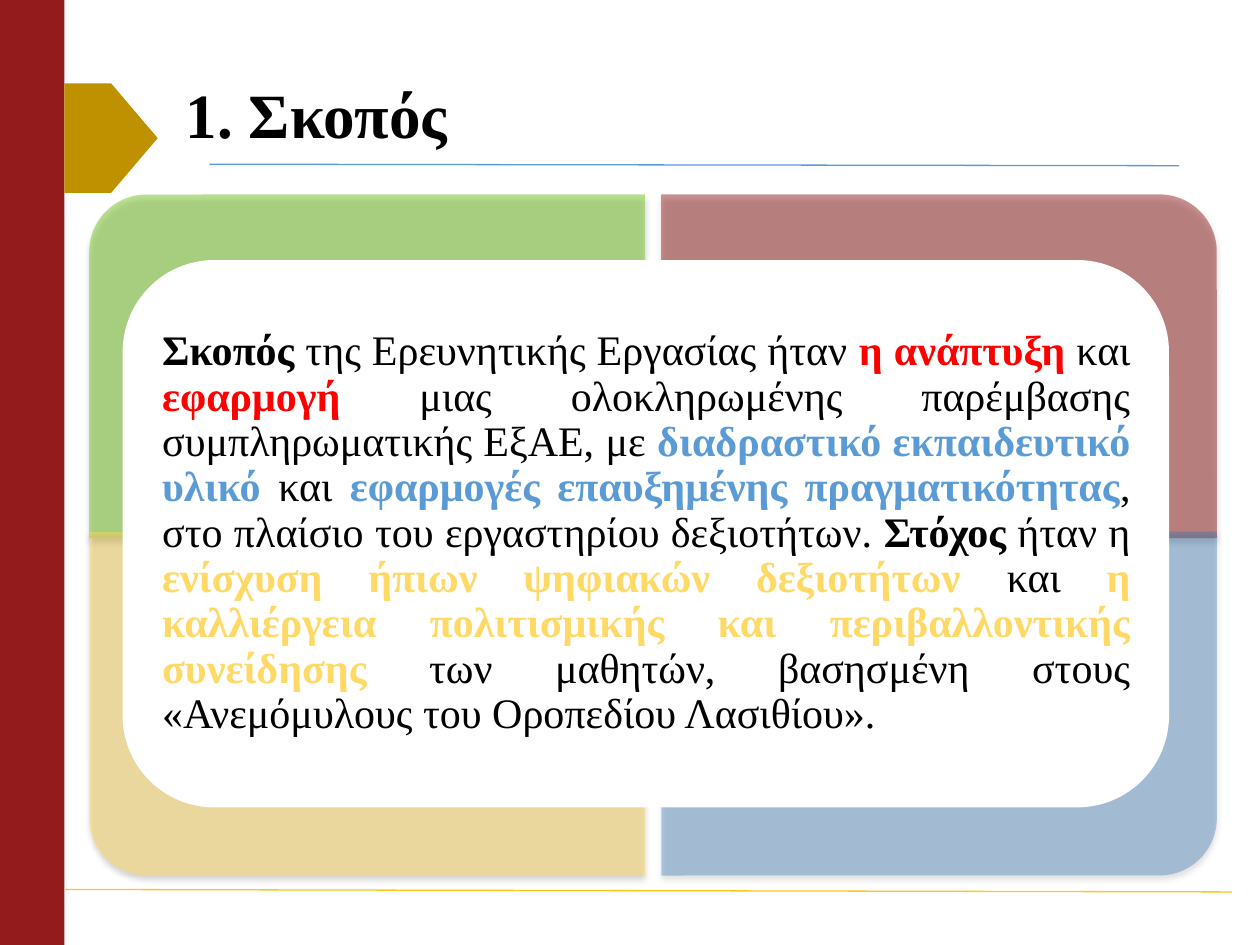
from lxml import etree
from pptx import Presentation
from pptx.dml.color import RGBColor
from pptx.enum.shapes import MSO_CONNECTOR as Connector, MSO_SHAPE as Shape
from pptx.enum.text import MSO_ANCHOR as Anchor, PP_ALIGN as Align
from pptx.oxml.ns import qn
from pptx.util import Cm, Pt

BLACK = RGBColor(0x00, 0x00, 0x00)
WHITE = RGBColor(0xFF, 0xFF, 0xFF)
CRIMSON = RGBColor(0x93, 0x1B, 0x1B)
OCHRE = RGBColor(0xBF, 0x90, 0x00)
GOLD = RGBColor(0xFF, 0xC6, 0x1A)
SAND = RGBColor(0xFF, 0xD9, 0x66)
SKY = RGBColor(0x5B, 0x9B, 0xD5)
NAVY = RGBColor(0x2E, 0x75, 0xB6)
GREEN = RGBColor(0x92, 0xD0, 0x50)
RED = RGBColor(0xFF, 0x00, 0x00)

PURPOSE = [
    ("Σκοπός", BLACK, True),
    (" της Ερευνητικής Εργασίας ήταν ", BLACK, False),
    ("η ανάπτυξη ", RED, True),
    ("και ", BLACK, False),
    ("εφαρμογή", RED, True),
    (" μιας ολοκληρωμένης παρέμβασης συμπληρωματικής ΕξΑΕ, με ", BLACK, False),
    ("διαδραστικό εκπαιδευτικό υλικό ", SKY, True),
    ("και", BLACK, False),
    (" εφαρμογές επαυξημένης πραγματικότητας", SKY, True),
    (", στο πλαίσιο του εργαστηρίου δεξιοτήτων. ", BLACK, False),
    ("Στόχος", BLACK, True),
    (" ήταν η ", BLACK, False),
    ("ενίσχυση ήπιων ψηφιακών δεξιοτήτων ", SAND, True),
    ("και ", BLACK, False),
    ("η καλλιέργεια πολιτισμικής και περιβαλλοντικής συνείδησης", SAND, True),
    (" των μαθητών, βασησμένη στους «Ανεμόμυλους του Οροπεδίου Λασιθίου».",
     BLACK, False),
]


class SlideBuilder:
    font = "Times New Roman"

    def __init__(self, slide):
        self.slide = slide

    def block(self, kind, left, top, width, height, fill):
        shape = self.slide.shapes.add_shape(
            kind, Cm(left), Cm(top), Cm(width), Cm(height))
        shape.shadow.inherit = False
        shape.fill.solid()
        shape.fill.fore_color.rgb = fill
        shape.line.fill.background()
        return shape

    def quadrant(self, left, top, width, height, fill, opacity, turn):
        """Draw a translucent panel whose round corner is turned by quarter turns."""
        box = (left, top, width, height)
        if turn % 180:
            shift = (width - height) / 2
            box = (left + shift, top - shift, height, width)
        panel = self.block(Shape.ROUND_1_RECTANGLE, *box, fill)
        panel.rotation = turn
        properties = panel.element.spPr
        tint = properties.find(qn("a:solidFill"))[0]
        self.add_alpha(tint, opacity)
        shadow = etree.SubElement(
            properties.find(qn("a:effectLst")), qn("a:outerShdw"),
            blurRad=str(Pt(3.5)), dist=str(Pt(2.2)), dir="5400000",
            rotWithShape="0")
        shade = etree.SubElement(shadow, qn("a:srgbClr"), val=str(BLACK))
        self.add_alpha(shade, 32)

    @staticmethod
    def add_alpha(color, percent):
        etree.SubElement(color, qn("a:alpha"), val=str(percent * 1000))

    def rule(self, x1, y1, x2, y2, color):
        line = self.slide.shapes.add_connector(
            Connector.STRAIGHT, Cm(x1), Cm(y1), Cm(x2), Cm(y2))
        line.line.color.rgb = color
        line.line.width = Pt(0.75)
        etree.SubElement(line.element.spPr, qn("a:effectLst"))

    def text(self, left, top, width, height, runs, size, align, inset):
        frame = self.slide.shapes.add_textbox(
            Cm(left), Cm(top), Cm(width), Cm(height)).text_frame
        frame.word_wrap = True
        frame.vertical_anchor = Anchor.MIDDLE
        frame.margin_left = frame.margin_right = Cm(0.25)
        frame.margin_top = frame.margin_bottom = Cm(inset)
        paragraph = frame.paragraphs[0]
        paragraph.alignment = align
        paragraph.line_spacing = 0.9
        for words, color, bold in runs:
            run = paragraph.add_run()
            run.text = words
            run.font.name = self.font
            run.font.size = Pt(size)
            run.font.bold = bold
            run.font.color.rgb = color


def main():
    deck = Presentation()
    deck.slide_width, deck.slide_height = Cm(25.4), Cm(19.05)
    builder = SlideBuilder(deck.slides.add_slide(deck.slide_layouts[6]))

    builder.block(Shape.RECTANGLE, 0, 0, 1.3, 19.05, CRIMSON)
    builder.rule(4.22, 3.31, 23.77, 3.34, SKY)
    builder.rule(1.3, 17.93, 24.84, 17.98, GOLD)
    builder.block(Shape.PENTAGON, 1.3, 1.68, 1.88, 2.21, OCHRE)
    builder.text(3.5, 1.32, 19.99, 2.13, [("1. Σκοπός", BLACK, True)],
                 36, Align.LEFT, 0.13)

    left, right, upper, lower = 1.8, 13.33, 3.92, 10.72
    for x, y, fill, opacity, turn in [
        (left, upper, GREEN, 62, 270),
        (right, upper, CRIMSON, 47, 0),
        (left, lower, SAND, 50, 180),
        (right, lower, NAVY, 35, 90),
    ]:
        builder.quadrant(x, y, 11.2, 6.93, fill, opacity, turn)

    card = builder.block(Shape.ROUNDED_RECTANGLE, 2.49, 5.26, 21.06, 11, WHITE)
    card.line.color.rgb = WHITE
    card.line.width = Pt(1)
    builder.text(3.02, 5.79, 20.02, 9.93, PURPOSE, 24, Align.JUSTIFY, 0.25)

    deck.save("out.pptx")


if __name__ == "__main__":
    main()
